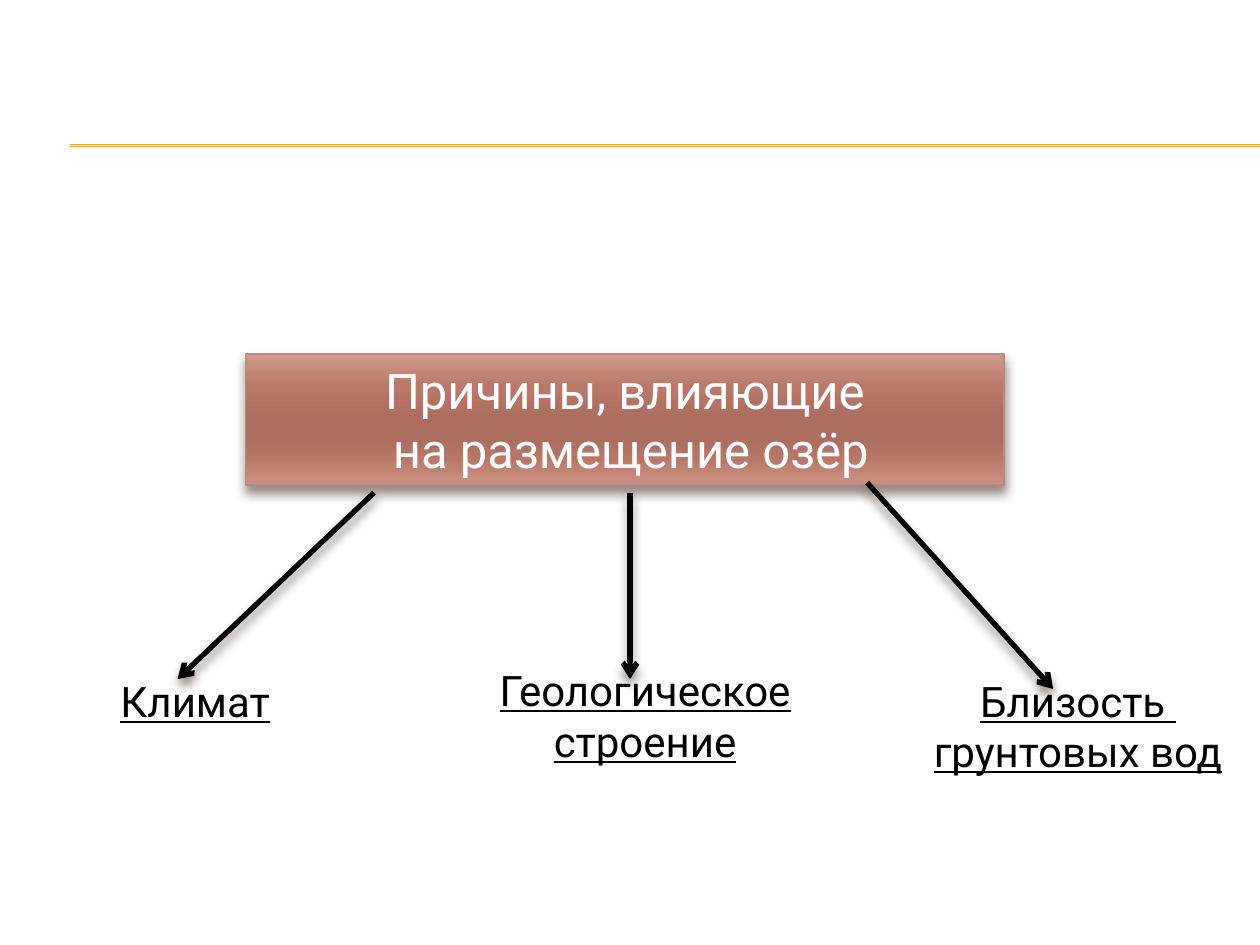
from lxml.etree import SubElement
from pptx import Presentation
from pptx.dml.color import RGBColor
from pptx.enum.shapes import MSO_CONNECTOR, MSO_SHAPE
from pptx.enum.text import MSO_ANCHOR, MSO_AUTO_SIZE, PP_ALIGN
from pptx.oxml.ns import qn
from pptx.util import Cm, Pt

COLORS = {
    "rule": "F0A22E",
    "border": "B58B80",
    "shadow": "4E3B30",
    "arrow": "000000",
    "heading": "FFFFFF",
    "cause": "000000",
}
HEADING_GRADIENT = {
    0: "D09A8D", 25: "B97869", 50: "AB6E60",
    65: "AB6E60", 80: "B87868", 100: "CA9386",
}
HEADING_FONT = {"name": "Roboto", "size": Pt(28)}
CAUSE_FONT = {"name": "Roboto", "size": Pt(24), "underline": True}
FRAME_FORMAT = {"word_wrap": True, "auto_size": MSO_AUTO_SIZE.SHAPE_TO_FIT_TEXT}

# Left, top, width, height in cm
HEADING_BOX = (4.95, 7.14, 15.29, 2.64)
CAUSES = [
    (["Климат"], (2.18, 13.49, 6.93, 1.27), PP_ALIGN.LEFT),
    (["Геологическое строение"], (9.73, 13.28, 6.55, 2.31), PP_ALIGN.CENTER),
    (["Близость ", "грунтовых вод"], (17.07, 13.49, 9.32, 2.31), PP_ALIGN.CENTER),
]
# Start x, start y, end x, end y in cm
ARROWS = [
    (12.7, 9.93, 12.7, 13.69),
    (7.54, 9.93, 3.58, 13.69),
    (17.48, 9.73, 21.23, 13.89),
]
RULES = [(1.42, y, 25.4, y) for y in (2.92, 2.95)]


def rgb(name):
    return RGBColor.from_string(COLORS[name])


def cm(values):
    return [Cm(value) for value in values]


def effect_list(shape):
    """Return the shape's effect list, adding an empty one if needed."""
    properties = shape._element.spPr
    effects = properties.find(qn("a:effectLst"))
    if effects is None:
        effects = SubElement(properties, qn("a:effectLst"))
    return effects


def add_shadow(shape):
    shadow = SubElement(effect_list(shape), qn("a:outerShdw"), blurRad=str(Pt(6)),
                        dist=str(Pt(4)), dir="5400000", rotWithShape="0")
    color = SubElement(shadow, qn("a:srgbClr"), val=COLORS["shadow"])
    SubElement(color, qn("a:alpha"), val="60000")


def add_line(slide, ends, color, width):
    line = slide.shapes.add_connector(MSO_CONNECTOR.STRAIGHT, *cm(ends))
    line.line.color.rgb = rgb(color)
    line.line.width = Pt(width)
    effect_list(line)
    return line


def add_arrow(slide, ends):
    arrow = add_line(slide, ends, "arrow", 3)
    SubElement(arrow._element.spPr.find(qn("a:ln")), qn("a:tailEnd"), type="arrow")
    add_shadow(arrow)


def write_text(frame, lines, font_format, color, alignment):
    for name, value in FRAME_FORMAT.items():
        setattr(frame, name, value)
    for index, line in enumerate(lines):
        paragraph = frame.add_paragraph() if index else frame.paragraphs[0]
        paragraph.alignment = alignment
        run = paragraph.add_run()
        run.text = line
        for name, value in font_format.items():
            setattr(run.font, name, value)
        run.font.color.rgb = rgb(color)


def fill_gradient(shape, stops):
    """Fill the shape from top to bottom with stops given as percent: colour."""
    shape.fill.gradient()
    shape.fill.gradient_angle = 270
    stop_list = shape._element.spPr.find(qn("a:gradFill")).find(qn("a:gsLst"))
    for default_stop in list(stop_list):
        stop_list.remove(default_stop)
    for percent, color in stops.items():
        stop = SubElement(stop_list, qn("a:gs"), pos=str(percent * 1000))
        SubElement(stop, qn("a:srgbClr"), val=color)


def add_heading(slide, lines):
    heading = slide.shapes.add_shape(MSO_SHAPE.RECTANGLE, *cm(HEADING_BOX))
    fill_gradient(heading, HEADING_GRADIENT)
    heading.line.color.rgb = rgb("border")
    heading.line.width = Pt(0.79)
    heading.shadow.inherit = False
    add_shadow(heading)
    heading.text_frame.vertical_anchor = MSO_ANCHOR.MIDDLE
    write_text(heading.text_frame, lines, HEADING_FONT, "heading", PP_ALIGN.CENTER)


def add_cause(slide, lines, box, alignment):
    cause = slide.shapes.add_textbox(*cm(box))
    write_text(cause.text_frame, lines, CAUSE_FONT, "cause", alignment)


def main():
    presentation = Presentation()
    presentation.slide_width, presentation.slide_height = Cm(25.4), Cm(19.05)
    slide = presentation.slides.add_slide(presentation.slide_layouts[6])
    for ends in RULES:
        add_line(slide, ends, "rule", 0.75)
    add_heading(slide, ["Причины, влияющие", " на размещение озёр"])
    for ends in ARROWS:
        add_arrow(slide, ends)
    for lines, box, alignment in CAUSES:
        add_cause(slide, lines, box, alignment)
    presentation.save("out.pptx")


if __name__ == "__main__":
    main()
